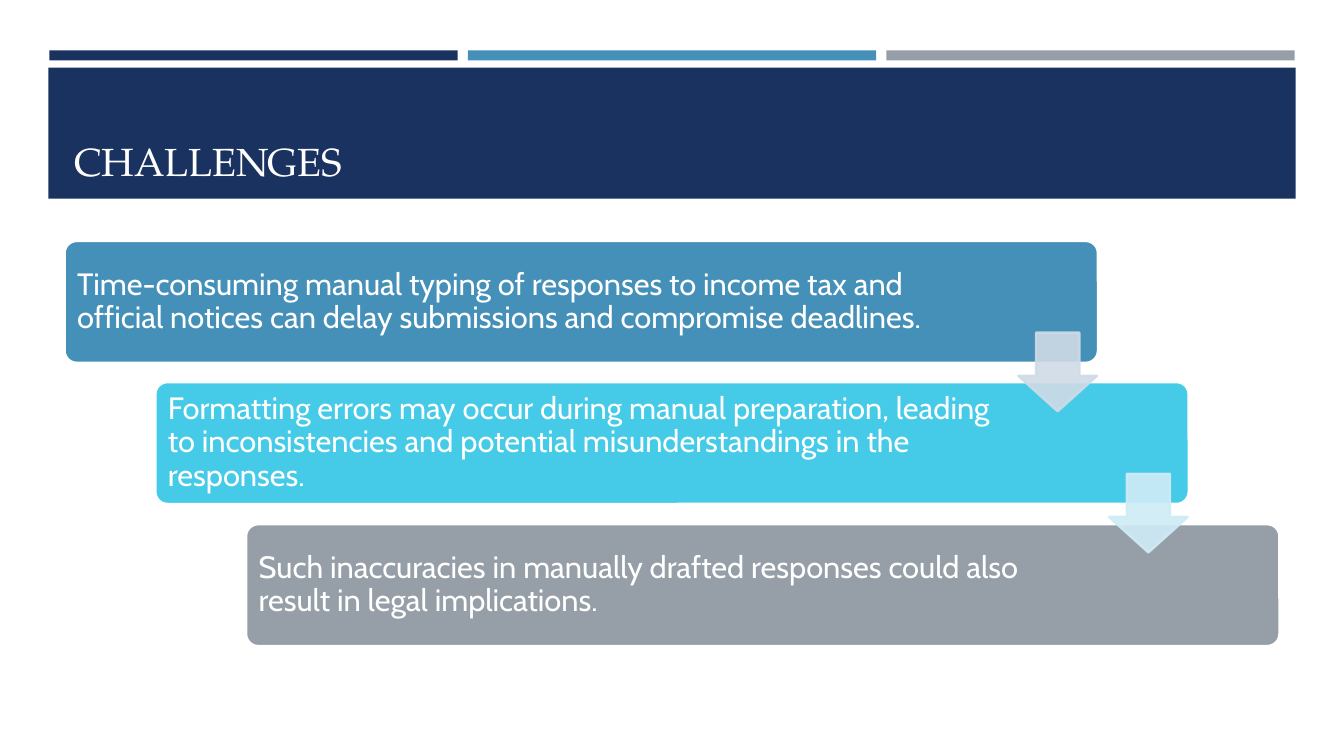
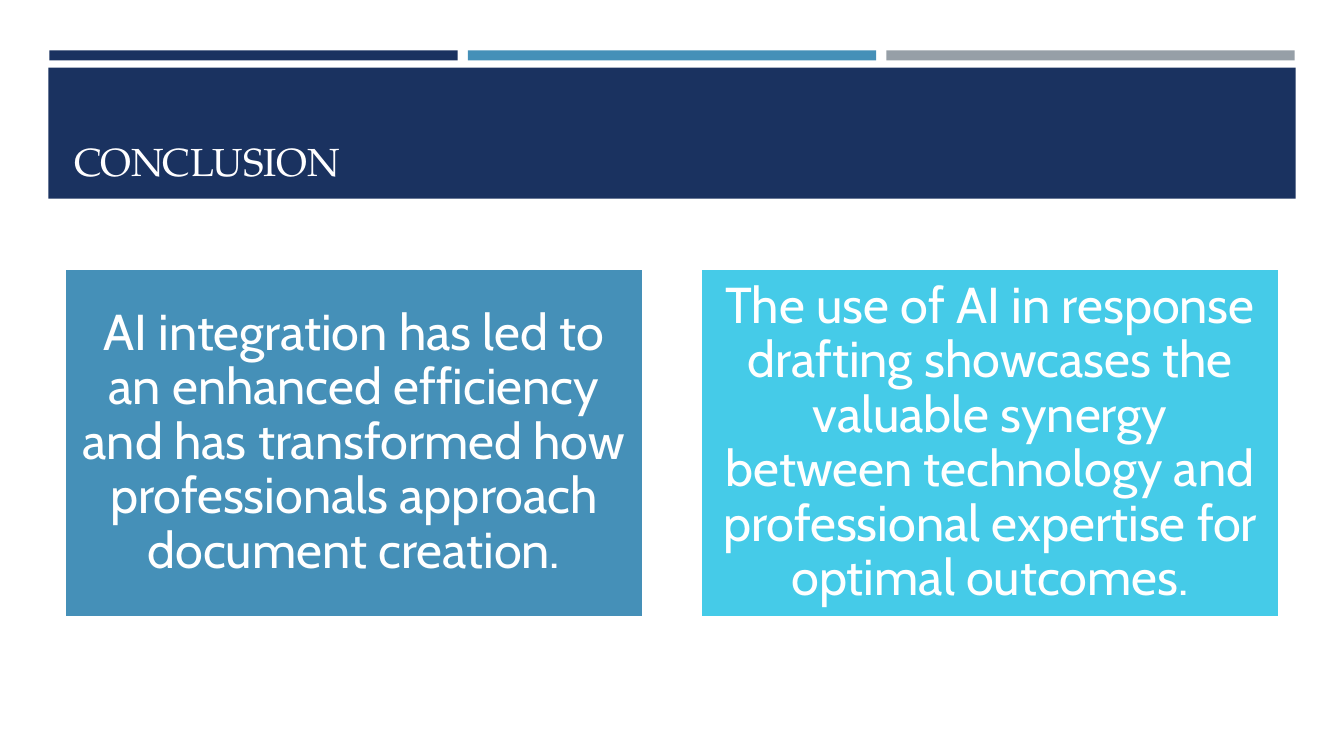
from dataclasses import dataclass

from lxml import etree
from pptx import Presentation
from pptx.dml.color import RGBColor
from pptx.enum.shapes import MSO_SHAPE as Preset
from pptx.enum.text import MSO_ANCHOR as Anchor, PP_ALIGN as Align
from pptx.oxml.ns import qn
from pptx.shapes.autoshape import Shape
from pptx.slide import Slide
from pptx.util import Emu, Pt

# Shared scale, colours and fonts
EMU_PER_PX = 9144  # 100 px to the inch
NAVY, BLUE, CYAN, GREY = "1A3260", "4590B8", "45CBE8", "969FA7"
WHITE, TITLE_WHITE = "FFFFFF", "FFFEFF"
TITLE_FONT, BODY_FONT = "TeX Gyre Pagella", "Cabin"
OUTLINE = 1.75


@dataclass(frozen=True)
class Box:
    left: int
    top: int
    width: int
    height: int


@dataclass(frozen=True)
class Step:
    text: str
    fill: str
    right_inset: int
    arrow: str | None = None


@dataclass(frozen=True)
class Panel:
    text: str
    fill: str


@dataclass(frozen=True)
class TextStyle:
    font: str
    size: int
    color: str = WHITE
    align: Align = Align.LEFT
    anchor: Anchor = Anchor.MIDDLE
    line_spacing: float = 0.9


TITLE_STYLE = TextStyle(TITLE_FONT, 28, TITLE_WHITE, anchor=Anchor.BOTTOM, line_spacing=1.0)
STEP_STYLE = TextStyle(BODY_FONT, 22)
PANEL_STYLE = TextStyle(BODY_FONT, 36, align=Align.CENTER)

STEPS = [
    Step("Time-consuming manual typing of responses to income tax and official notices "
         "can delay submissions and compromise deadlines.", BLUE, 133, "CFDBE6"),
    Step("Formatting errors may occur during manual preparation, leading to inconsistencies "
         "and potential misunderstandings in the responses.", CYAN, 178, "CFECF6"),
    Step("Such inaccuracies in manually drafted responses could also result in legal "
         "implications.", GREY, 178),
]
PANELS = [
    Panel("AI integration has led to an enhanced efficiency and has transformed how "
          "professionals approach document creation.", BLUE),
    Panel("The use of AI in response drafting showcases the valuable synergy between "
          "technology and professional expertise for optimal outcomes.", CYAN),
]


def px(length: int) -> Emu:
    return Emu(length * EMU_PER_PX)


def rgb(color: str) -> RGBColor:
    return RGBColor.from_string(color)


def place(box: Box) -> tuple[Emu, Emu, Emu, Emu]:
    return px(box.left), px(box.top), px(box.width), px(box.height)


def add_block(slide: Slide, preset: Preset, box: Box, fill: str, line: str | None = None) -> Shape:
    shape = slide.shapes.add_shape(preset, *place(box))
    shape.shadow.inherit = False
    shape.fill.solid()
    shape.fill.fore_color.rgb = rgb(fill)
    if line:
        shape.line.color.rgb = rgb(line)
        shape.line.width = Pt(OUTLINE)
    else:
        shape.line.fill.background()
    return shape


def set_opacity(shape: Shape, percent: int) -> None:
    for color in shape.element.spPr.iter(qn("a:srgbClr")):
        etree.SubElement(color, qn("a:alpha")).set("val", str(percent * 1000))


def write_text(shape: Shape, text: str, style: TextStyle, insets: tuple[int, int, int, int]) -> None:
    """Insets run left, top, right, bottom."""
    frame = shape.text_frame
    frame.word_wrap = True
    frame.vertical_anchor = style.anchor
    frame.margin_left, frame.margin_top, frame.margin_right, frame.margin_bottom = map(px, insets)
    paragraph = frame.paragraphs[0]
    paragraph.text = text
    paragraph.alignment = style.align
    paragraph.line_spacing = style.line_spacing
    paragraph.font.name = style.font
    paragraph.font.size = Pt(style.size)
    paragraph.font.color.rgb = rgb(style.color)


def add_titled_slide(presentation: Presentation, title: str) -> Slide:
    slide = presentation.slides.add_slide(presentation.slide_layouts[6])
    # Three accent bars above the title band
    for index, color in enumerate((NAVY, BLUE, GREY)):
        add_block(slide, Preset.RECTANGLE, Box(49 + 415 * index, 50, 405, 10), color)
    add_block(slide, Preset.RECTANGLE, Box(48, 67, 1237, 130), NAVY)
    title_box = slide.shapes.add_textbox(*place(Box(64, 77, 1206, 111)))
    write_text(title_box, title, TITLE_STYLE, (10, 5, 10, 5))
    return slide


def add_staircase(slide: Slide, steps: list[Step]) -> None:
    boxes = [Box(64 + 90 * index, 239 + 281 * index // 2, 1025, 121) for index in range(len(steps))]
    for step, box in zip(steps, boxes):
        card = add_block(slide, Preset.ROUNDED_RECTANGLE, box, step.fill, WHITE)
        card.adjustments[0] = 0.1
        write_text(card, step.text, STEP_STYLE, (9, 9, step.right_inset, 9))
    # Arrows lie over the cards they link
    for step, box in zip(steps, boxes):
        if step.arrow:
            arrow_box = Box(box.left + box.width - 79, box.top + 91, 78, 78)
            arrow = add_block(slide, Preset.DOWN_ARROW, arrow_box, step.arrow, step.arrow)
            arrow.adjustments[0], arrow.adjustments[1] = 0.55, 0.45
            set_opacity(arrow, 90)


def add_panels(slide: Slide, panels: list[Panel]) -> None:
    for index, panel in enumerate(panels):
        box = Box(64 + 631 * index, 267, 574, 345)
        card = add_block(slide, Preset.RECTANGLE, box, panel.fill, WHITE)
        write_text(card, panel.text, PANEL_STYLE, (15, 15, 15, 15))


def main() -> None:
    presentation = Presentation()
    presentation.slide_width, presentation.slide_height = px(1333), px(750)
    add_staircase(add_titled_slide(presentation, "CHALLENGES"), STEPS)
    add_panels(add_titled_slide(presentation, "CONCLUSION"), PANELS)
    presentation.save("out.pptx")


if __name__ == "__main__":
    main()
